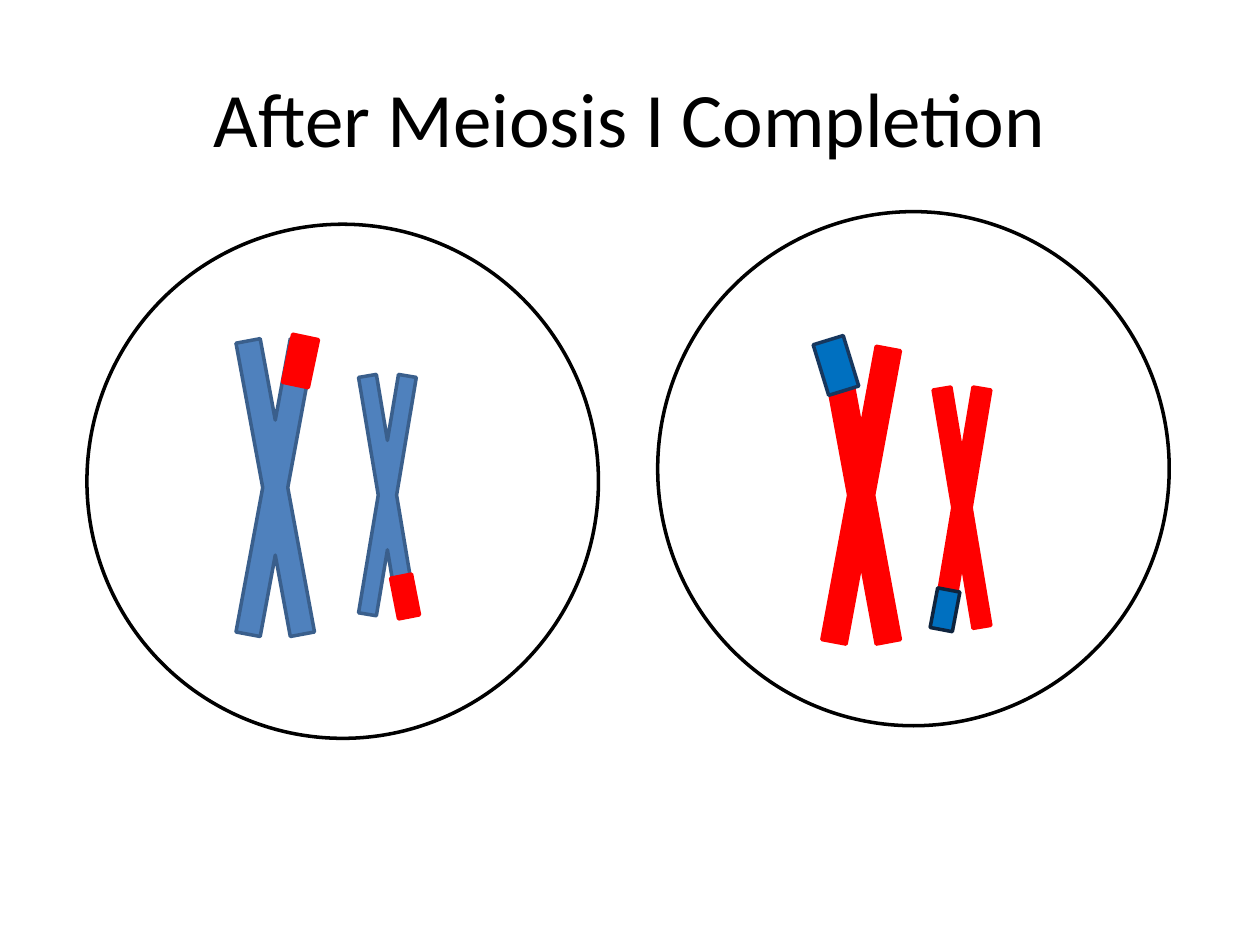
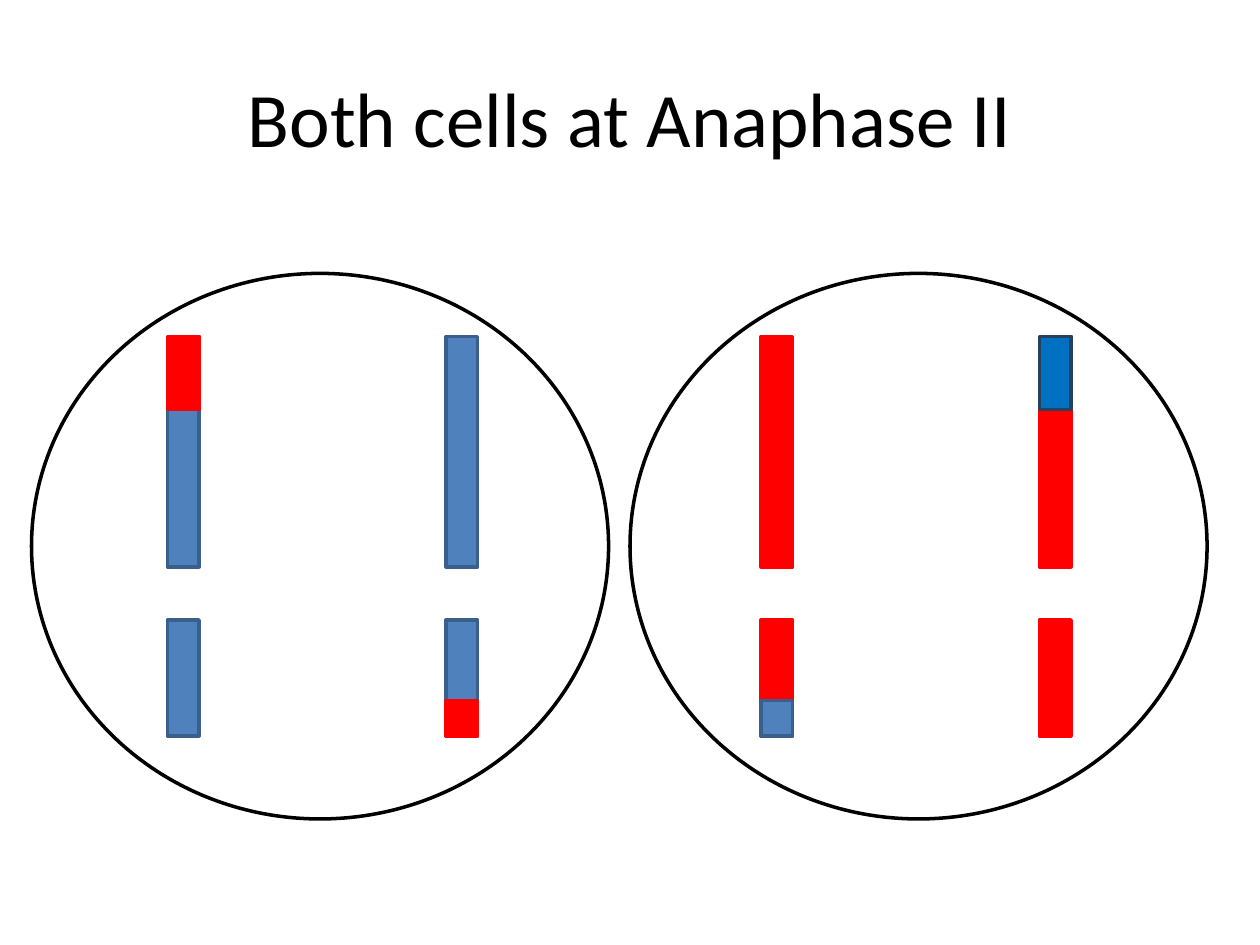
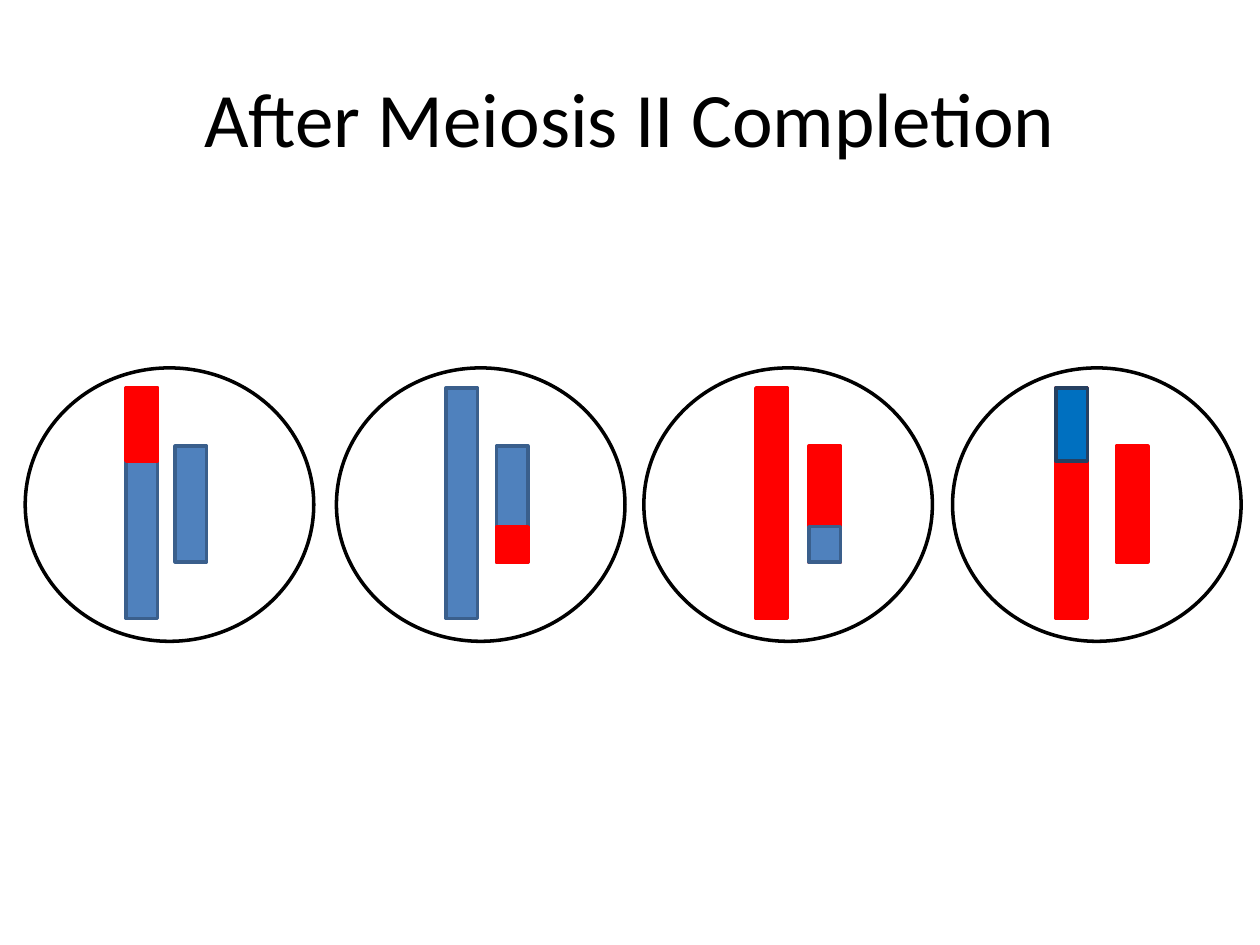
"""Build three slides that follow chromosomes with crossovers through meiosis."""
from pptx import Presentation
from pptx.dml.color import RGBColor
from pptx.enum.shapes import MSO_SHAPE
from pptx.enum.text import MSO_ANCHOR, PP_ALIGN
from pptx.util import Inches, Pt

OVAL, BAR, CROSS = MSO_SHAPE.OVAL, MSO_SHAPE.RECTANGLE, MSO_SHAPE.MATH_MULTIPLY
MIDDLE, CENTER = MSO_ANCHOR.MIDDLE, PP_ALIGN.CENTER

BLACK = RGBColor(0x00, 0x00, 0x00)
RED_FILL = RGBColor(0xFF, 0x00, 0x00)
BLUE_FILL = RGBColor(0x4F, 0x81, 0xBD)
BLUE_EDGE = RGBColor(0x3A, 0x5F, 0x8C)
BRIGHT_FILL = RGBColor(0x00, 0x70, 0xC0)
BRIGHT_EDGE = RGBColor(0x25, 0x40, 0x61)
NAVY_EDGE = RGBColor(0x17, 0x37, 0x5E)
DARK_EDGE = RGBColor(0x0F, 0x24, 0x3E)

OUTLINE = (None, BLACK)
RED = (RED_FILL, RED_FILL)
BLUE = (BLUE_FILL, BLUE_EDGE)
BRIGHT = (BRIGHT_FILL, BRIGHT_EDGE)

FONT = "Calibri"
WIDTH, HEIGHT = 10, 7.5
TITLE_BOX = (0.05 * WIDTH, 0.04 * HEIGHT, 0.9 * WIDTH, 1.25)

MEIOSIS_ONE_CELLS = [(0.69, 1.78), (5.22, 1.68)]
MEIOSIS_ONE_DIAMETERS = (4.06, 4.08)
LONG_CROSS, SHORT_CROSS = (0.83, 4.48), (0.61, 3.64)
CHROMOSOMES = [
    (1.77, 1.63, LONG_CROSS, BLUE),
    (6.42, 1.69, LONG_CROSS, RED),
    (2.77, 2.11, SHORT_CROSS, BLUE),
    (7.33, 2.21, SHORT_CROSS, RED),
]
SWAPPED_TIPS = [
    ((2.28, 2.67, 0.21, 0.39), 11.9, RED),
    ((6.51, 2.69, 0.25, 0.42), -17.1, (BRIGHT_FILL, NAVY_EDGE)),
    ((3.13, 4.57, 0.17, 0.33), -11.1, RED),
    ((7.41, 4.68, 0.18, 0.32), 10.8, (BRIGHT_FILL, DARK_EDGE)),
]

CHROMATID_WIDTH = 0.25
LONG_LENGTH, LONG_TIP = 1.83, 0.58
SHORT_LENGTH, SHORT_TIP = 0.92, 0.28
CHROMATID_PAIRS = [
    {"long": (BLUE, RED), "short": (BLUE, None)},
    {"long": (BLUE, None), "short": (BLUE, RED)},
    {"long": (RED, None), "short": (RED, BLUE)},
    {"long": (RED, BRIGHT), "short": (RED, None)},
]

ANAPHASE = {
    "cells": [0.25, 5], "cell_top": 2.17, "cell_size": (4.58, 4.33),
    "long_lefts": [1.33, 3.54, 6.04, 8.25], "long_top": 2.67,
    "short_lefts": [1.33, 3.54, 6.04, 8.25], "short_top": 4.92,
}
GAMETES = {
    "cells": [0.2, 2.67, 5.11, 7.56], "cell_top": 2.92, "cell_size": (2.29, 2.17),
    "long_lefts": [1, 3.54, 6, 8.38], "long_top": 3.08,
    "short_lefts": [1.39, 3.94, 6.42, 8.86], "short_top": 3.54,
}


def add_titled_slide(presentation, title):
    slide = presentation.slides.add_slide(presentation.slide_layouts[5])
    shape = slide.shapes.title
    shape.left, shape.top, shape.width, shape.height = map(Inches, TITLE_BOX)
    shape.text_frame.text = title
    shape.text_frame.vertical_anchor = MIDDLE
    paragraph = shape.text_frame.paragraphs[0]
    paragraph.alignment = CENTER
    paragraph.font.name = FONT
    paragraph.font.size = Pt(44)
    paragraph.font.color.rgb = BLACK
    return slide


def add_part(slide, kind, box, style, rotation=0):
    fill, edge = style
    shape = slide.shapes.add_shape(kind, *map(Inches, box))
    shape.rotation = rotation
    shape.shadow.inherit = False
    if fill is None:
        shape.fill.background()
    else:
        shape.fill.solid()
        shape.fill.fore_color.rgb = fill
    shape.line.color.rgb = edge
    shape.line.width = Pt(2)


def add_chromatid(slide, left, top, length, body, tip, tip_top, tip_length):
    add_part(slide, BAR, (left, top, CHROMATID_WIDTH, length), body)
    if tip:
        add_part(slide, BAR, (left, tip_top, CHROMATID_WIDTH, tip_length), tip)


def draw_meiosis_one(slide):
    for left, top, size, style in CHROMOSOMES:
        add_part(slide, CROSS, (left, top, *size), style)
    for box, rotation, style in SWAPPED_TIPS:
        add_part(slide, BAR, box, style, rotation)
    for corner in MEIOSIS_ONE_CELLS:
        add_part(slide, OVAL, (*corner, *MEIOSIS_ONE_DIAMETERS), OUTLINE)


def draw_separated(slide, stage):
    for left in stage["cells"]:
        add_part(slide, OVAL, (left, stage["cell_top"], *stage["cell_size"]), OUTLINE)
    long_top, short_top = stage["long_top"], stage["short_top"]
    short_tip_top = short_top + SHORT_LENGTH - SHORT_TIP
    for pair, long_left, short_left in zip(
            CHROMATID_PAIRS, stage["long_lefts"], stage["short_lefts"]):
        add_chromatid(slide, long_left, long_top, LONG_LENGTH,
                      *pair["long"], long_top, LONG_TIP)
        add_chromatid(slide, short_left, short_top, SHORT_LENGTH,
                      *pair["short"], short_tip_top, SHORT_TIP)


def main():
    presentation = Presentation()
    presentation.slide_width, presentation.slide_height = Inches(WIDTH), Inches(HEIGHT)
    draw_meiosis_one(add_titled_slide(presentation, "After Meiosis I Completion"))
    draw_separated(add_titled_slide(presentation, "Both cells at Anaphase II"), ANAPHASE)
    draw_separated(add_titled_slide(presentation, "After Meiosis II Completion"), GAMETES)
    presentation.save("out.pptx")


if __name__ == "__main__":
    main()
